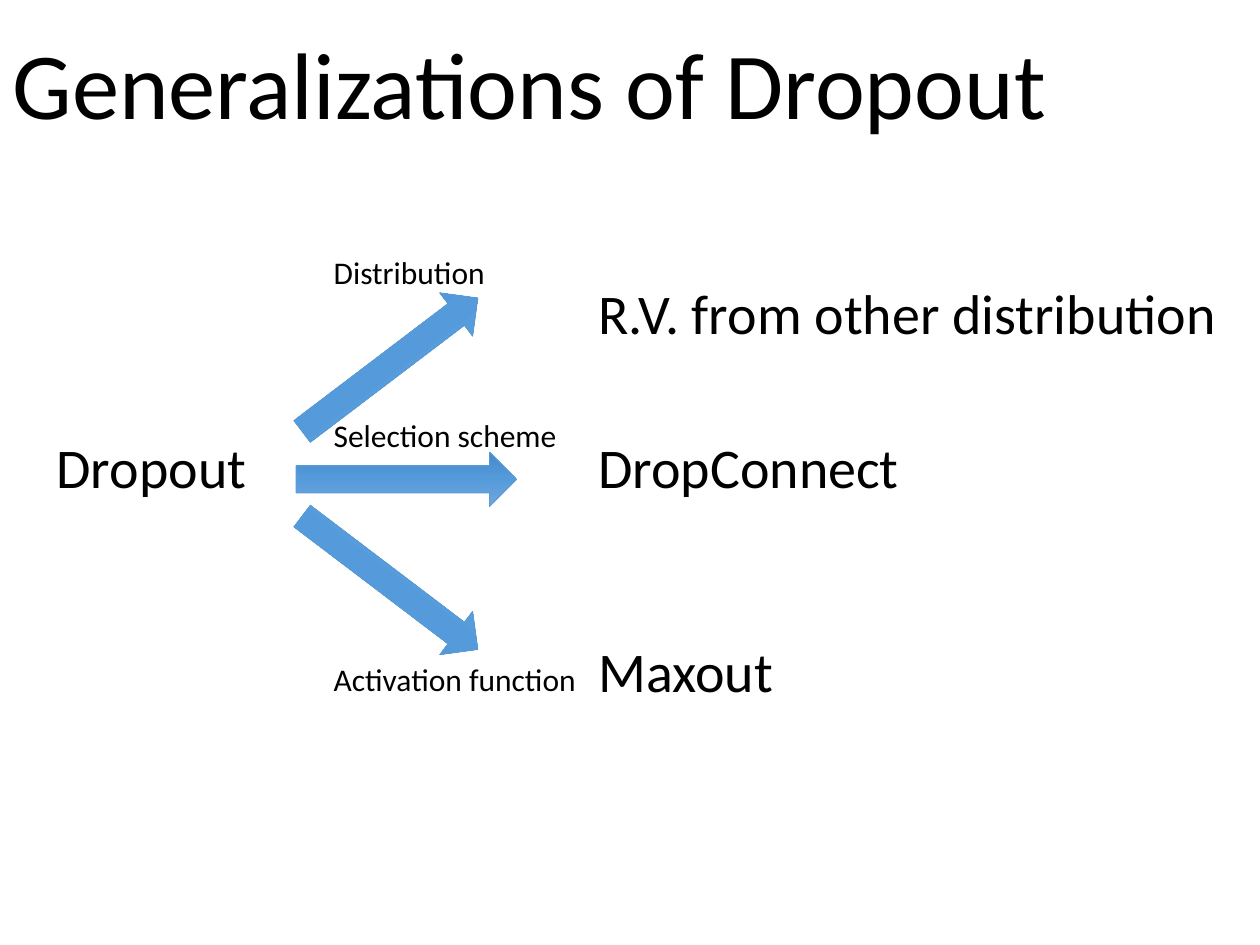
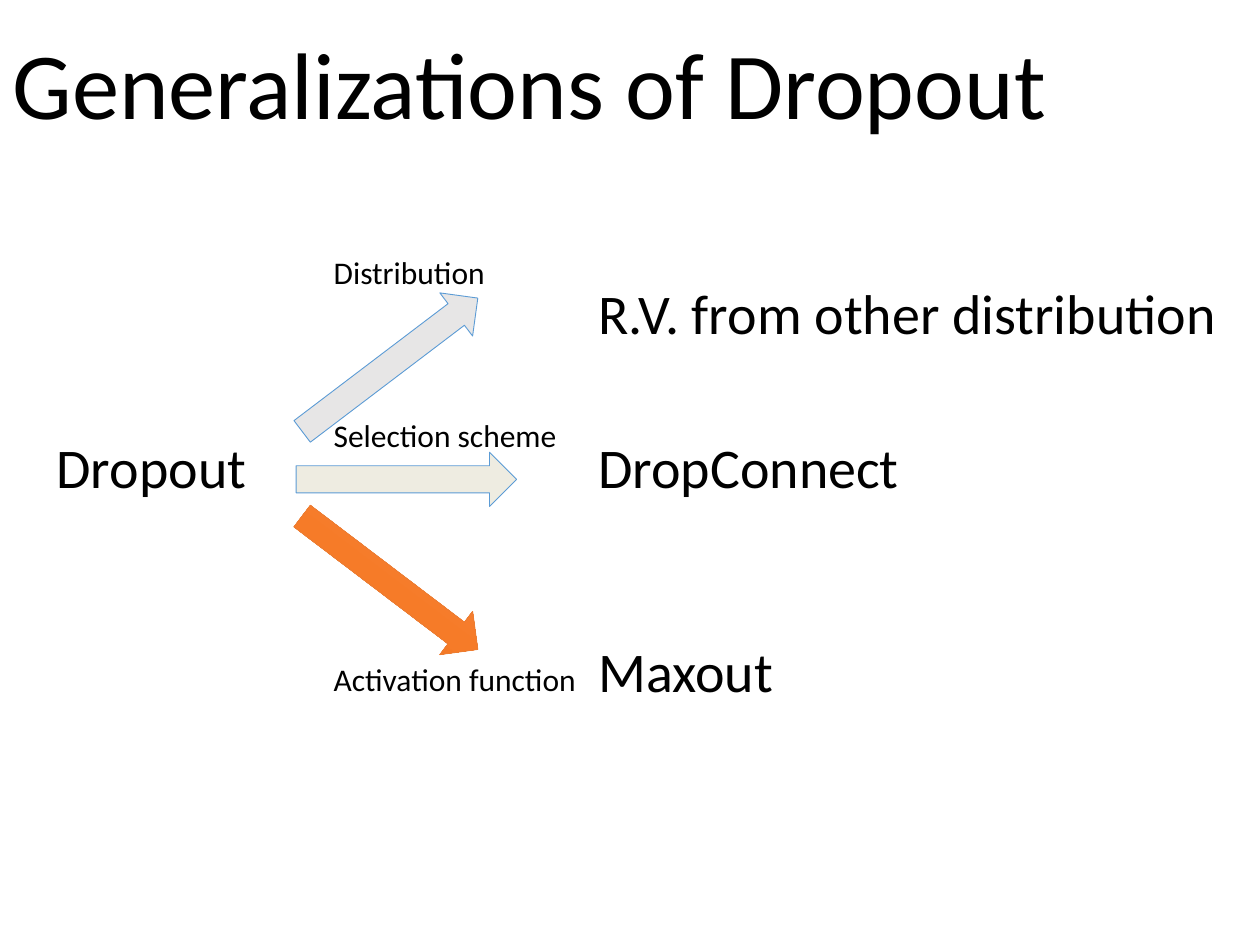
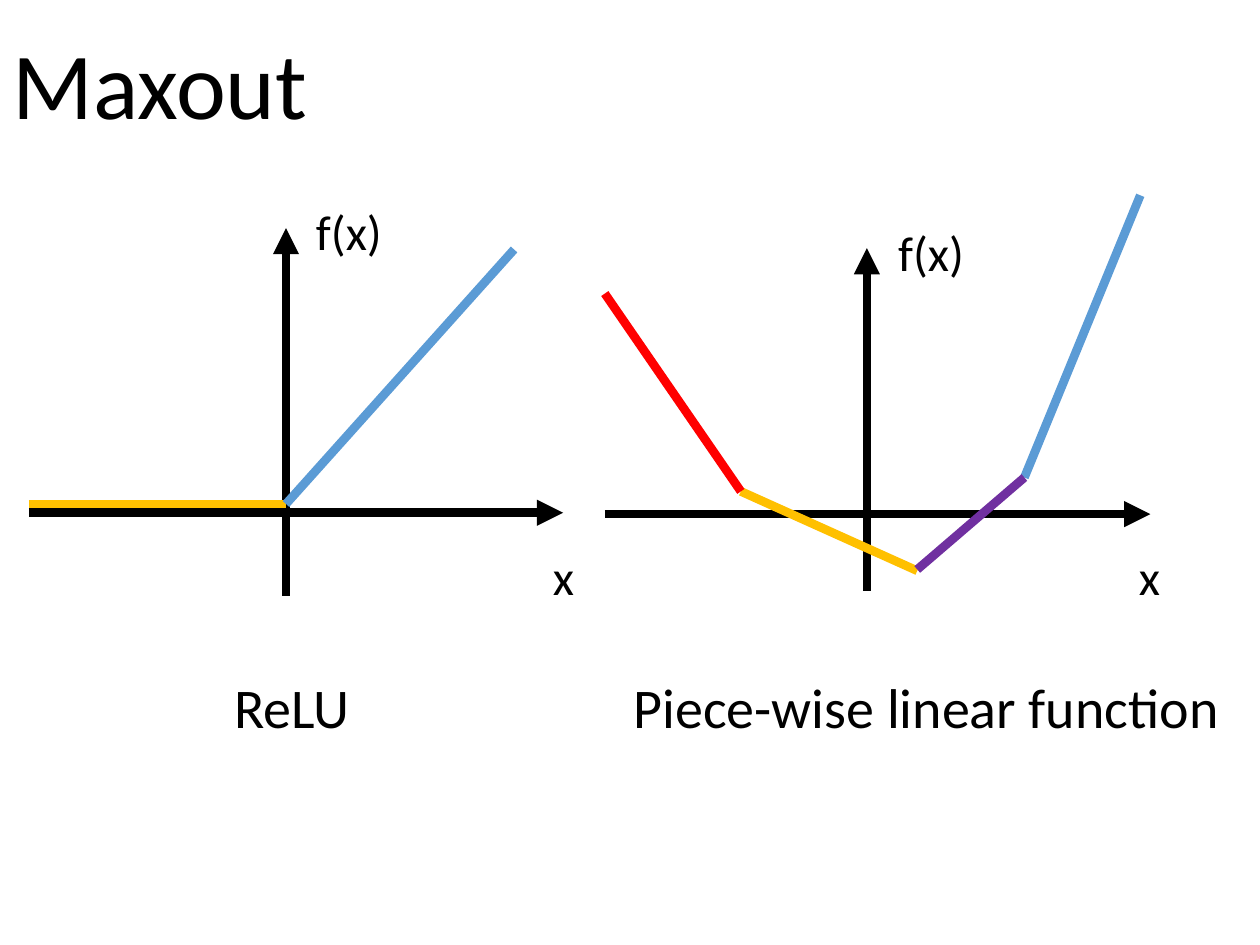
from copy import deepcopy
from pptx import Presentation
from pptx.dml.color import RGBColor
from pptx.enum import shapes, text
from pptx.oxml.ns import qn
from pptx.util import Inches, Pt
from lxml import etree

HUES = {"black": "000000", "blue": "5B9BD5", "orange": "ED7D31", "gold": "FFC000",
        "violet": "7030A0", "red": "FF0000", "grey": "E7E6E6", "cream": "EEECE1"}
FADES = {"blue": ("71A6DB", "559BDB", "448ACA"),
         "orange": ("F18C57", "F67B28", "E56C19")}
FONT = "Calibri"

deck = Presentation()
deck.slide_width, deck.slide_height = Inches(10), Inches(7.5)


def style(frame, words, size):
    frame.text = words
    para = frame.paragraphs[0]
    para.font.name = FONT
    para.font.size = Pt(size)
    para.font.color.rgb = RGBColor.from_string(HUES["black"])
    return para


def label(slide, words, size, left, top, wide, high, wrap):
    box = slide.shapes.add_textbox(Inches(left), Inches(top), Inches(wide), Inches(high))
    style(box.text_frame, words, size)
    box.text_frame.word_wrap = wrap
    box.text_frame.auto_size = text.MSO_AUTO_SIZE.SHAPE_TO_FIT_TEXT


# Slides and titles
pages = []
for name in ("Generalizations of Dropout", "Generalizations of Dropout", "Maxout"):
    page = deck.slides.add_slide(deck.slide_layouts[5])
    title = page.shapes.title
    title.left, title.top = Inches(0), Inches(-0.02)
    title.width, title.height = Inches(8.62), Inches(1.45)
    para = style(title.text_frame, name, 54)
    para.alignment = text.PP_ALIGN.LEFT
    para.line_spacing = 0.9
    title.text_frame.vertical_anchor = text.MSO_ANCHOR.MIDDLE
    title.text_frame.auto_size = text.MSO_AUTO_SIZE.NONE
    pages.append(page)

# Dropout and its three generalizations: left, top, turn, flip
arrows = [(2.22, 2.68, 322.8, True), (2.35, 3.59, 0, True), (2.22, 4.41, 37.2, False)]
terms = [("Dropout", 0.35, 3.38, 1.82, True),
         ("R.V. from other distribution", 4.65, 2.16, 5.24, False),
         ("DropConnect", 4.65, 3.38, 2.59, True),
         ("Maxout", 4.65, 5, 2.49, True)]
notes = [("Distribution", 1.96, 1.42, False),
         ("Selection scheme", 3.25, 2.26, True),
         ("Activation function", 5.19, 2.26, True)]
looks = [("blue", "blue", "blue"), ("grey", "cream", "orange")]

for page, fills in zip(pages, looks):
    for (left, top, turn, flip), hue in zip(arrows, fills):
        arrow = page.shapes.add_shape(shapes.MSO_SHAPE.RIGHT_ARROW, Inches(left),
                                      Inches(top), Inches(1.75), Inches(0.43))
        arrow.shadow.inherit = False
        arrow.rotation = turn
        if flip:
            arrow._element.spPr.find(qn("a:xfrm")).set("flipV", "1")
        if hue in FADES:
            arrow.fill.gradient()
            arrow.fill.gradient_angle = 270
            first = arrow._element.find(".//" + qn("a:gs"))
            first.addnext(deepcopy(first))
            for stop, spot, shade in zip(arrow.fill.gradient_stops, (0, 0.5, 1), FADES[hue]):
                stop.position = spot
                stop.color.rgb = RGBColor.from_string(shade)
        else:
            arrow.fill.solid()
            arrow.fill.fore_color.rgb = RGBColor.from_string(HUES[hue])
        edge = "orange" if hue == "orange" else "blue"
        arrow.line.color.rgb = RGBColor.from_string(HUES[edge])
        arrow.line.width = Pt(0.5)
    for words, left, top, wide, wrap in terms:
        label(page, words, 32, left, top, wide, 0.64, wrap)
    for words, top, wide, wrap in notes:
        label(page, words, 18, 2.55, top, wide, 0.4, wrap)

# Maxout: two plots; each line is colour, start, end, and axes have a head
plot = pages[2]
lines = [("black", 2.27, 4.73, 2.27, 1.81), ("black", 0.23, 4.07, 4.47, 4.07),
         ("gold", 0.23, 4, 2.27, 4), ("blue", 2.27, 4, 4.08, 1.98),
         ("black", 6.88, 4.69, 6.88, 1.97), ("black", 4.8, 4.08, 9.13, 4.08),
         ("gold", 5.88, 3.9, 7.28, 4.53), ("blue", 8.13, 3.79, 9.05, 1.55),
         ("violet", 7.28, 4.52, 8.13, 3.79), ("red", 5.88, 3.9, 4.8, 2.33)]
for hue, *ends in lines:
    line = plot.shapes.add_connector(shapes.MSO_CONNECTOR.STRAIGHT, *map(Inches, ends))
    line.line.color.rgb = RGBColor.from_string(HUES[hue])
    line.line.width = Pt(5)
    props = line._element.spPr
    if hue == "black":
        etree.SubElement(props.find(qn("a:ln")), qn("a:tailEnd"), type="triangle")
    etree.SubElement(props, qn("a:effectLst"))

for words, size, left, top, wide, high in [
        ("ReLU", 32, 1.76, 5.29, 1.15, 0.64),
        ("x", 28, 4.29, 4.29, 0.37, 0.57),
        ("f(x)", 28, 2.41, 1.55, 0.73, 0.57),
        ("Piece-wise linear function", 32, 4.93, 5.29, 4.9, 0.64),
        ("x", 28, 8.94, 4.29, 0.37, 0.57),
        ("f(x)", 28, 7.03, 1.72, 0.73, 0.57)]:
    label(plot, words, size, left, top, wide, high, False)

deck.save("out.pptx")
